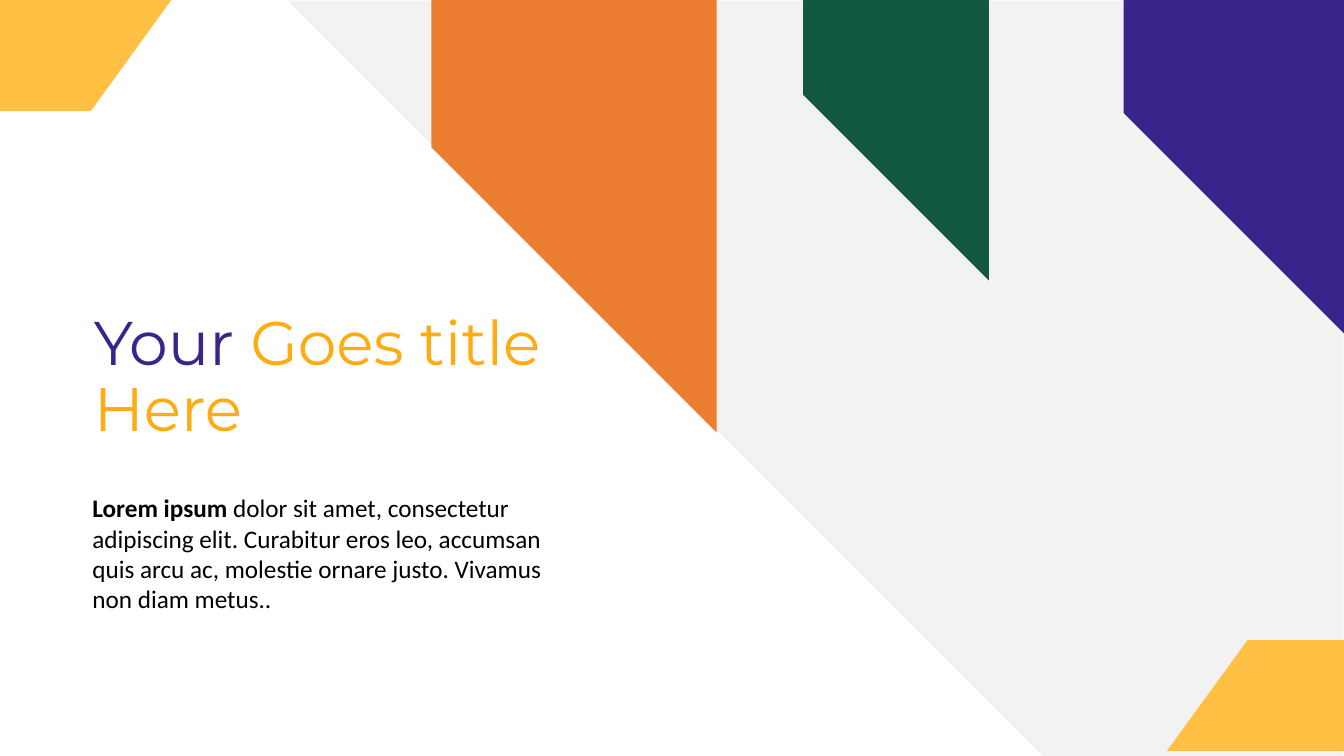
from pptx import Presentation
from pptx.dml.color import RGBColor
from pptx.enum.shapes import MSO_SHAPE
from pptx.enum.text import MSO_ANCHOR, MSO_AUTO_SIZE, PP_ALIGN
from pptx.util import Cm, Pt

HUES = {
    "grey": "F2F2F2", "white": "FFFFFF", "black": "000000",
    "orange": "ED7D31", "green": "125742", "purple": "38248A",
    "amber": "FEAC11", "yellow": "FFC043",
}
WIDE, HIGH = 33.87, 19.05


def hue(name):
    return RGBColor.from_string(HUES[name])


def draw(points, name):
    dots = [(Cm(x), Cm(y)) for x, y in points]
    pen = slide.shapes.build_freeform(*dots[0])
    pen.add_line_segments(dots[1:], close=True)
    form = pen.convert_to_shape()
    form.shadow.inherit = False
    form.fill.solid()
    form.fill.fore_color.rgb = hue(name)
    form.line.fill.background()


deck = Presentation()
deck.slide_width, deck.slide_height = Cm(WIDE), Cm(HIGH)
slide = deck.slides.add_slide(deck.slide_layouts[5])

# Grey triangle with its right angle at the top right
side = 26.67
back = slide.shapes.add_shape(
    MSO_SHAPE.RIGHT_TRIANGLE, Cm(WIDE - side), 0, Cm(side), Cm(side))
back.rotation = 180
back.shadow.inherit = False
back.fill.solid()
back.fill.fore_color.rgb = hue("grey")
back.line.color.rgb = hue("white")
back.line.width = Pt(1)

# Hanging bands, each cut at 45 degrees
bands = [(10.87, 18.06, 3.71, "orange"),
         (20.24, 24.92, 2.39, "green"),
         (28.32, WIDE, 2.85, "purple")]
for left, right, drop, name in bands:
    draw([(left, 0), (left, drop), (right, drop + right - left), (right, 0)],
         name)

# Title
title = slide.shapes.title
title.left, title.top = Cm(2.11), Cm(7.7)
title.width, title.height = Cm(12.4), Cm(3.68)
frame = title.text_frame
frame.auto_size = MSO_AUTO_SIZE.NONE
frame.vertical_anchor = MSO_ANCHOR.MIDDLE
line = frame.paragraphs[0]
line.alignment = PP_ALIGN.LEFT
line.line_spacing = 0.9
for words, name in [("Your ", "purple"), ("Goes title Here", "amber")]:
    run = line.add_run()
    run.text = words
    run.font.name = "Montserrat"
    run.font.size = Pt(44)
    run.font.color.rgb = hue(name)

# Body text
body = slide.shapes.add_textbox(Cm(2.08), Cm(12.29), Cm(12.37), Cm(3.33))
frame = body.text_frame
frame.word_wrap = True
frame.auto_size = MSO_AUTO_SIZE.SHAPE_TO_FIT_TEXT
line = frame.paragraphs[0]
parts = [
    ("Lorem ipsum ", True),
    ("dolor sit amet, consectetur adipiscing elit. Curabitur eros leo, "
     "accumsan quis arcu ac, molestie ornare justo. Vivamus non diam metus..",
     False),
]
for words, bold in parts:
    run = line.add_run()
    run.text = words
    run.font.name = "Calibri"
    run.font.size = Pt(18)
    run.font.bold = bold
    run.font.color.rgb = hue("black")

# Corner tabs: outer edge, inward direction, short side, long side
tabs = [(-0.18, 1, 2.8, 0), (33.91, -1, 16.13, 18.92)]
for edge, way, short, long in tabs:
    draw([(edge, short), (edge + way * 2.47, short),
          (edge + way * 4.5, long), (edge, long)], "yellow")

deck.save("out.pptx")
